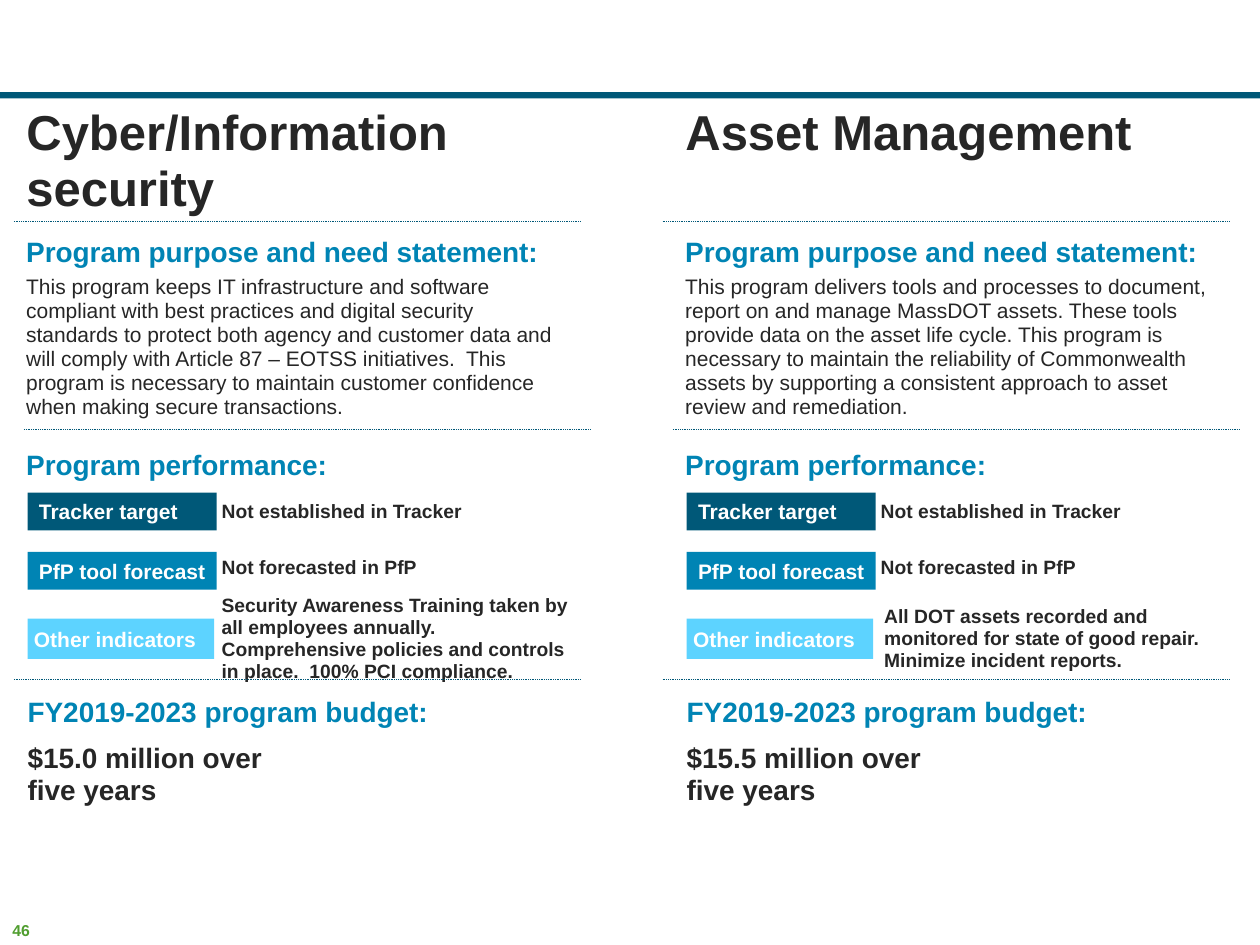
"""Build a two-column programme summary slide."""
import dataclasses

import lxml.etree
import pptx
import pptx.dml.color
import pptx.enum.dml
import pptx.enum.shapes
import pptx.enum.text
import pptx.oxml.ns
import pptx.util

Pt = pptx.util.Pt
Anchor = pptx.enum.text.MSO_ANCHOR


@dataclasses.dataclass(frozen=True)
class Theme:
    font: str = "Arial"
    navy: str = "005878"
    blue: str = "0084B4"
    sky: str = "5DD3FF"
    ink: str = "262626"
    white: str = "FFFFFF"
    green: str = "509E2F"
    title: int = 28
    heading: int = 16
    body: int = 12
    result: int = 11
    number: int = 9
    line_spacing: float = 0.95


@dataclasses.dataclass(frozen=True)
class Program:
    left: float
    rule_left: float
    placeholder: int
    title: str
    purpose: str
    indicators: str
    indicators_shift: float
    budget: str


THEME = Theme()
COLUMN_WIDTH = 324
TEXT_INDENT = 7.9
PROGRAMS = (
    Program(
        7.9, 7.9, 1, "Cyber/Information security",
        "This program keeps IT infrastructure and software compliant with best practices "
        "and digital security standards to protect both agency and customer data and will "
        "comply with Article 87 – EOTSS initiatives.  This program is necessary to maintain "
        "customer confidence when making secure transactions.",
        "Security Awareness Training taken by all employees annually.  Comprehensive "
        "policies and controls in place.  100% PCI compliance.",
        0, "$15.0 million over \vfive years",
    ),
    Program(
        384.5, 378.7, 3, "Asset Management",
        "This program delivers tools and processes to document, report on and manage "
        "MassDOT assets. These tools provide data on the asset life cycle. This program is "
        "necessary to maintain the reliability of Commonwealth assets by supporting a "
        "consistent approach to asset review and remediation.",
        "All DOT assets recorded and monitored for state of good repair.  Minimize "
        "incident reports.",
        2, "$15.5 million over \vfive years",
    ),
)


def rgb(value):
    """Return a colour object for a hexadecimal value."""
    return pptx.dml.color.RGBColor.from_string(value)


def write(box, text, size, color, bold=True, insets=(7.2, 3.6, 7.2, 3.6),
          anchor=Anchor.TOP, spacing=THEME.line_spacing):
    """Put formatted text into a shape."""
    frame = box.text_frame
    frame.text = text
    frame.word_wrap = True
    frame.auto_size = pptx.enum.text.MSO_AUTO_SIZE.NONE
    frame.vertical_anchor = anchor
    (frame.margin_left, frame.margin_top,
     frame.margin_right, frame.margin_bottom) = map(Pt, insets)
    paragraph = frame.paragraphs[0]
    paragraph.alignment = pptx.enum.text.PP_ALIGN.LEFT
    paragraph.line_spacing = spacing
    paragraph.space_before = Pt(0)
    for span in paragraph.runs:
        span.font.name = THEME.font
        span.font.size = Pt(size)
        span.font.bold = bold
        span.font.color.rgb = rgb(color)


def add_text(page, place, *args, **options):
    """Add a text box at a place given in points."""
    box = page.shapes.add_textbox(*map(Pt, place))
    write(box, *args, **options)
    return box


def add_block(page, place, color):
    """Add a plain filled rectangle."""
    block = page.shapes.add_shape(
        pptx.enum.shapes.MSO_SHAPE.RECTANGLE, *map(Pt, place))
    block.shadow.inherit = False
    block.fill.solid()
    block.fill.fore_color.rgb = rgb(color)
    block.line.fill.background()
    return block


def add_rule(page, left, top):
    """Add a dotted rule across one column."""
    rule = page.shapes.add_connector(
        pptx.enum.shapes.MSO_CONNECTOR.STRAIGHT,
        Pt(left), Pt(top), Pt(left + COLUMN_WIDTH), Pt(top))
    rule.line.color.rgb = rgb(THEME.navy)
    rule.line.width = Pt(0.5)
    rule.line.dash_style = pptx.enum.dml.MSO_LINE.ROUND_DOT
    lxml.etree.SubElement(rule.element.spPr, pptx.oxml.ns.qn("a:effectLst"))


def add_title(page, program):
    """Fill the placeholder that heads a column."""
    title = page.placeholders[program.placeholder]
    title.left, title.top, title.width, title.height = map(
        Pt, (program.left, 56.9, COLUMN_WIDTH, 69))
    write(title, program.title, THEME.title, THEME.ink)


def add_performance(page, program):
    """Add the labelled performance rows of a column."""
    left = program.left + TEXT_INDENT
    result_left = program.left + 113.8
    rows = (
        ("Tracker target", THEME.navy, (281.5, 108, 21.6), 6.5,
         "Not established in Tracker", (0, 281.5, 43.2), Anchor.TOP, THEME.line_spacing),
        ("PfP tool forecast", THEME.blue, (315.4, 108, 21.6), 6.5,
         "Not forecasted in PfP", (0, 312.5, 50.4), Anchor.TOP, 1.0),
        ("Other indicators", THEME.sky, (353.5, 106.6, 23), 3.6,
         program.indicators, (program.indicators_shift, 354, 24.5),
         Anchor.MIDDLE, THEME.line_spacing),
    )
    for label, color, (top, width, height), inset, result, place, anchor, spacing in rows:
        block = add_block(page, (left, top, width, height), color)
        write(block, label, THEME.body, THEME.white, insets=(inset, 3.6, 0, 3.6),
              anchor=Anchor.MIDDLE, spacing=1.0)
        shift, result_top, result_height = place
        add_text(page, (result_left + shift, result_top, 216, result_height),
                 result, THEME.result, THEME.ink, insets=(5, 5, 6.5, 7.2),
                 anchor=anchor, spacing=spacing)


def add_program(page, program):
    """Add one complete programme column."""
    left = program.left
    indented = left + TEXT_INDENT
    flush = (0, 3.6, 0, 3.6)
    add_title(page, program)
    headings = (
        ("Program purpose and need statement:", 131.8),
        ("Program performance:", 253.4),
    )
    for heading, top in headings:
        add_text(page, (left, top, COLUMN_WIDTH, 18), heading, THEME.heading, THEME.blue)
    add_text(page, (left, 154.1, COLUMN_WIDTH, 105.8), program.purpose,
             THEME.body, THEME.ink, bold=False)
    add_performance(page, program)
    add_text(page, (indented, 394.6, COLUMN_WIDTH, 27), "FY2019-2023 program budget:",
             THEME.heading, THEME.blue, insets=flush)
    add_text(page, (indented, 421.2, COLUMN_WIDTH, 26.6), program.budget,
             THEME.heading, THEME.ink, insets=flush)
    for shift, top in ((0, 126.7), (5.8, 245.5), (0, 388.1)):
        add_rule(page, program.rule_left + shift, top)


def main():
    """Create and save the deck."""
    deck = pptx.Presentation()
    deck.slide_width, deck.slide_height = Pt(720), Pt(540)
    page = deck.slides.add_slide(deck.slide_layouts.get_by_name("Comparison"))
    used = {program.placeholder for program in PROGRAMS}
    for placeholder in list(page.placeholders):
        if placeholder.placeholder_format.idx not in used:
            placeholder.element.getparent().remove(placeholder.element)
    add_block(page, (0, 52.6, 720, 3.6), THEME.navy)
    number = add_text(page, (0, 522.7, 26, 18), "46", THEME.number, THEME.green, spacing=1.0)
    number.text_frame.word_wrap = False
    for program in PROGRAMS:
        add_program(page, program)
    deck.save("out.pptx")


if __name__ == "__main__":
    main()
